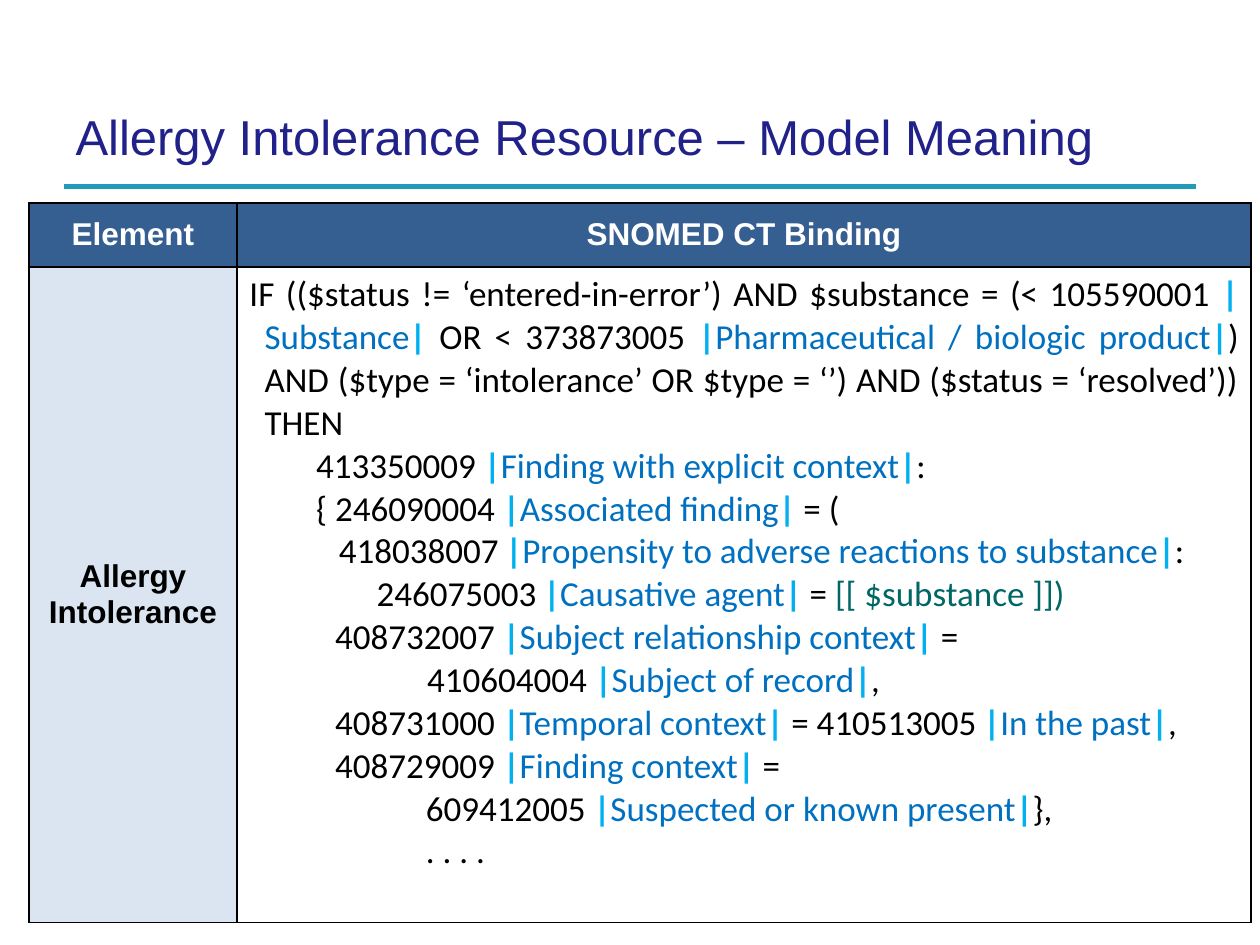
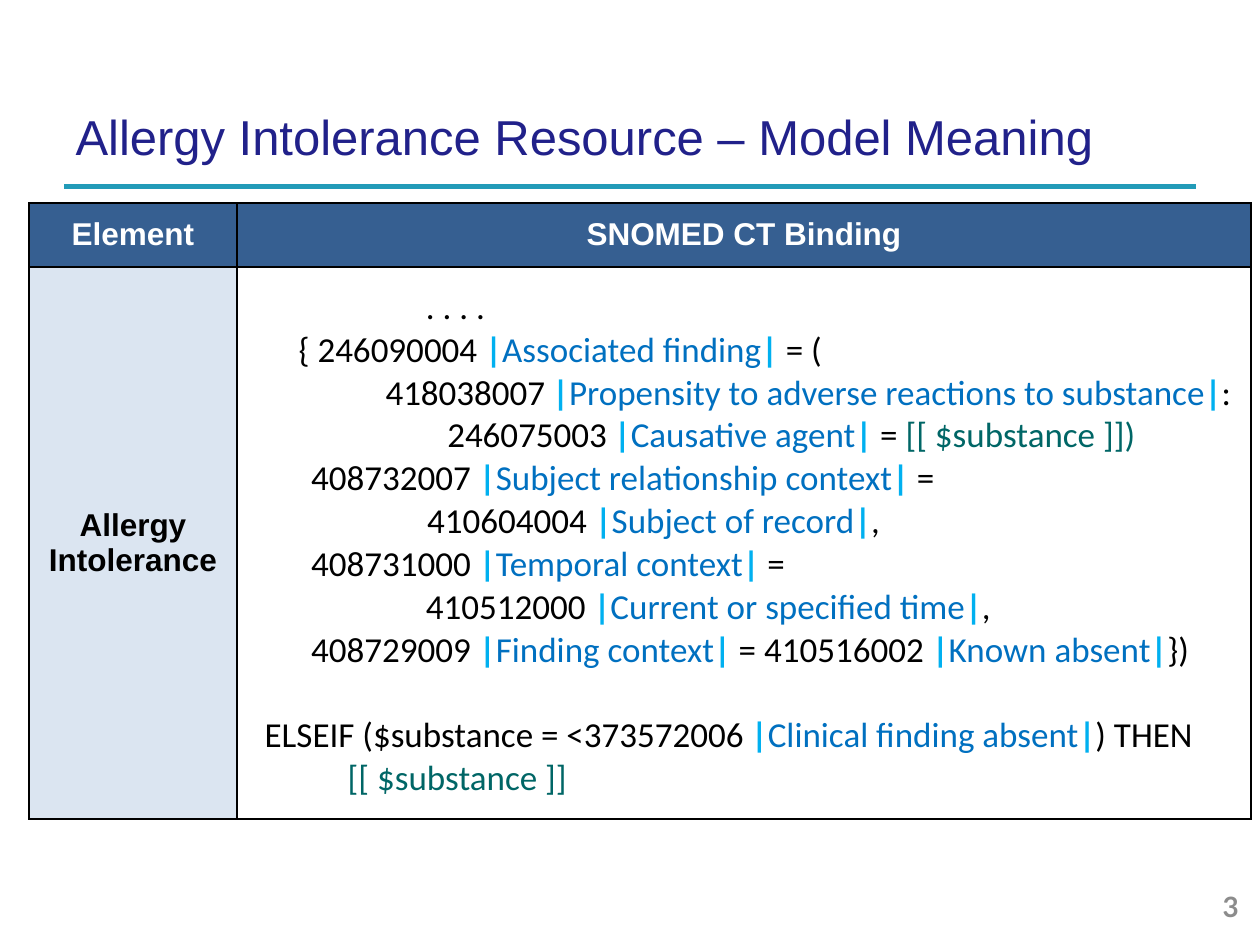
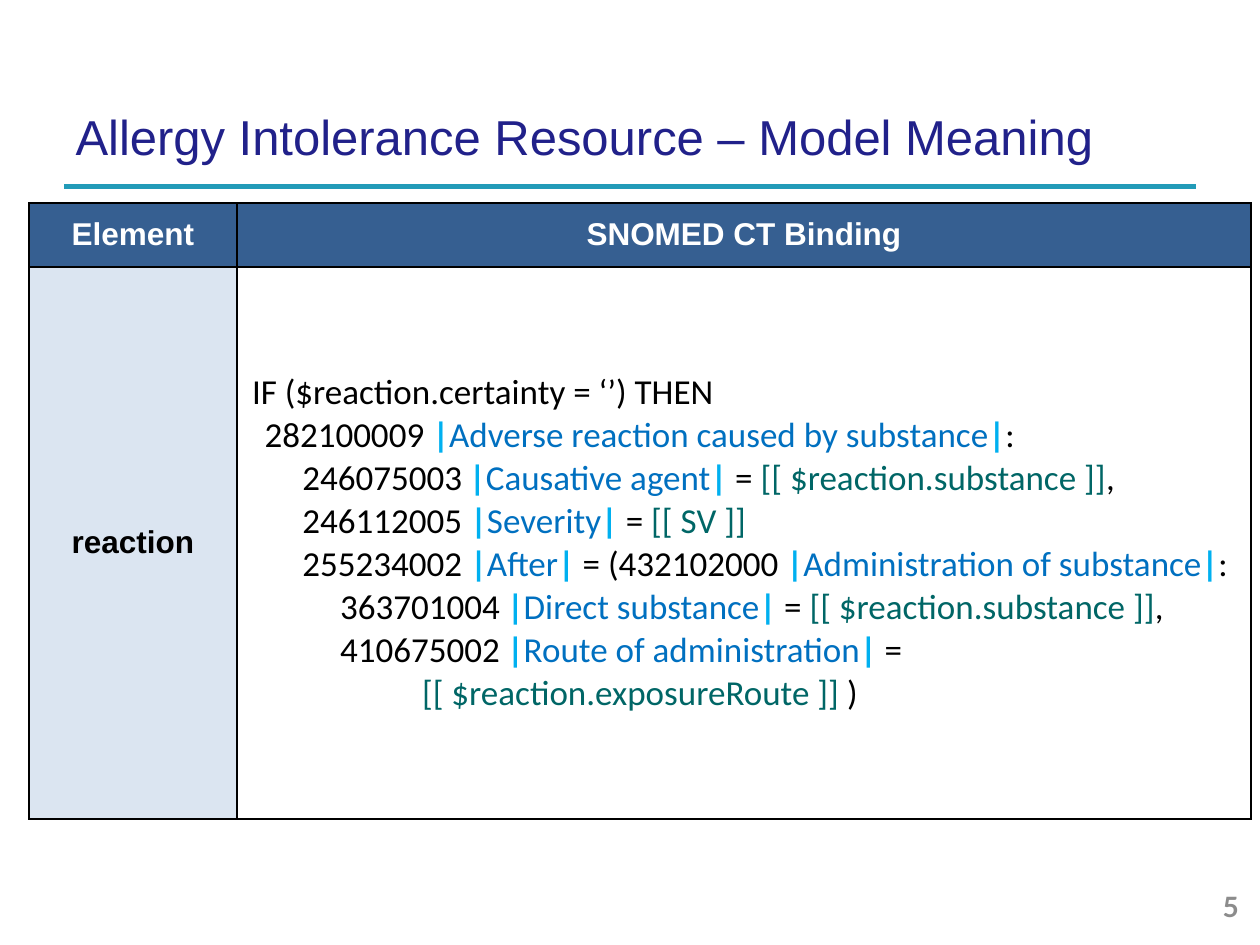
from lxml.etree import SubElement
from pptx import Presentation
from pptx.dml.color import RGBColor
from pptx.enum.shapes import MSO_CONNECTOR as Connector
from pptx.enum.text import MSO_ANCHOR as Anchor, MSO_AUTO_SIZE as AutoSize, PP_ALIGN as Align
from pptx.oxml.ns import qn
from pptx.util import Emu, Pt

SCALE = 9144  # EMU in one px, 100 px to the inch

COLORS = {
    "title": "21218A", "rule": "229BB8", "number": "8C8C8C",
    "header": "365F91", "element": "DBE5F1", "white": "FFFFFF", "black": "000000",
    "pipe": "00B0F0", "term": "0070C0", "slot": "006666", "gap": "333333",
}

# Font formats: color is a key of COLORS, the rest are font attributes
FORMATS = {
    "title": {"name": "Arial", "size": Pt(28), "bold": False, "color": "title"},
    "number": {"name": "Lato", "size": Pt(16), "bold": True, "color": "number"},
    "header": {"name": "Arial", "size": Pt(18), "bold": True, "color": "white"},
    "element": {"name": "Arial", "size": Pt(18), "bold": True, "color": "black"},
    "plain": {"name": "Calibri", "size": Pt(20), "bold": False, "color": "black"},
    "pipe": {"name": "Calibri", "size": Pt(20), "bold": True, "color": "pipe"},
    "term": {"name": "Calibri", "size": Pt(20), "bold": False, "color": "term"},
    "slot": {"name": "Calibri", "size": Pt(20), "bold": False, "color": "slot"},
    "gap": {"name": "Arial", "size": Pt(14), "bold": False, "color": "gap"},
}

TITLE = "Allergy Intolerance Resource – Model Meaning"
HEADINGS = ("Element", "SNOMED CT Binding")
COLUMNS = (165, 805)
HEADER_HEIGHT = 51

# Binding lines: left indent px, first-line indent px, text, optional space before in points.
# |term| is a concept name, [[ ]] a slot, and _ a narrow gap.
PAST_FINDING = [
    (12, -12, "IF (($status != ‘entered-in-error’) AND $substance = (< 105590001 |Substance| "
              "OR < 373873005 |Pharmaceutical / biologic product|) AND ($type = ‘intolerance’ "
              "OR $type = ‘’) AND ($status = ‘resolved’)) THEN"),
    (53, 0, "413350009 |Finding with explicit context|:"),
    (53, 0, "{ 246090004 |Associated finding| = ("),
    (71, 0, "418038007_|Propensity to adverse reactions to substance|:"),
    (101, 0, "246075003_|Causative agent| = [[ $substance ]])"),
    (68, 0, "408732007 |Subject relationship context| = "),
    (141, 0, "410604004 |Subject of record|,"),
    (68, 0, "408731000 |Temporal context| = 410513005_|In the past|,"),
    (68, 0, "408729009 |Finding context| = "),
    (140, 0, "609412005 |Suspected or known present|},"),
    (140, 0, ". . . ."),
]
ABSENT_FINDING = [
    (140, 0, ". . . ."),
    (39, 0, "{ 246090004 |Associated finding| = ("),
    (108, 0, "418038007_|Propensity to adverse reactions to substance|:"),
    (157, 0, "246075003_|Causative agent| = [[ $substance ]])"),
    (49, 0, "408732007 |Subject relationship context| = "),
    (141, 0, "410604004 |Subject of record|,"),
    (49, 0, "408731000 |Temporal context| = "),
    (140, 0, "410512000 |Current or specified time|,"),
    (49, 0, "408729009 |Finding context| = 410516002 |Known absent|})"),
    (22, -10, "ELSEIF ($substance = <373572006_|Clinical finding absent|) THEN", 24.4),
    (78, 0, "[[ $substance ]]"),
]
REACTION = [
    (22, -20, "IF ($reaction.certainty = ‘’) THEN"),
    (22, -10, "282100009 |Adverse reaction caused by substance|:"),
    (91, -49, "246075003_|Causative agent| = [[ $reaction.substance ]],"),
    (52, -10, "246112005 |Severity| = [[ SV ]]"),
    (52, -10, "255234002 |After| = (432102000 |Administration of substance|:"),
    (52, 20, "363701004_|Direct substance| = [[ $reaction.substance ]],"),
    (52, 20, "410675002_|Route of administration| = "),
    (137, 0, "[[ $reaction.exposureRoute ]] )"),
]

# Element, binding, body row height, anchor of the binding, page number
SLIDES = [
    ("Allergy Intolerance", PAST_FINDING, 520, Anchor.TOP, None),
    ("Allergy Intolerance", ABSENT_FINDING, 438, Anchor.MIDDLE, "3"),
    ("reaction", REACTION, 438, Anchor.MIDDLE, "5"),
]


def px(value):
    return Emu(value * SCALE)


def rgb(name):
    return RGBColor.from_string(COLORS[name])


def apply(target, values):
    for name, value in values.items():
        setattr(target, name, value)


def split_binding(text):
    """Yield (format name, text) for each run of a binding line."""
    for index, piece in enumerate(text.split("|")):
        if index % 2:
            yield from (("pipe", "|"), ("term", piece), ("pipe", "|"))
            continue
        before, opening, rest = piece.partition("[[")
        yield "plain", before.rstrip("_")
        if before.endswith("_"):
            yield "gap", " "
        if opening:
            inside, closing, after = rest.partition("]]")
            if after.startswith(")"):
                closing, after = closing + ")", after[1:]
            yield "slot", opening + inside + closing
            yield "plain", after


class Deck:
    def __init__(self):
        self.presentation = Presentation()
        apply(self.presentation, {"slide_width": px(1000), "slide_height": px(750)})
        self.slide = None

    def add_slide(self, title):
        self.slide = self.presentation.slides.add_slide(self.presentation.slide_layouts[5])
        shape = self.slide.shapes.title
        apply(shape, {"left": px(50), "top": px(81), "width": px(900), "height": px(60)})
        frame = shape.text_frame
        apply(frame, {"auto_size": AutoSize.NONE, "word_wrap": True,
                      "vertical_anchor": Anchor.BOTTOM})
        apply(frame, {f"margin_{side}": px(10) for side in ("left", "top", "right", "bottom")})
        self.add_runs(frame.paragraphs[0], [("title", title)], Align.LEFT)

    def add_runs(self, paragraph, runs, alignment):
        paragraph.alignment = alignment
        for format_name, text in runs:
            if not text:
                continue
            run = paragraph.add_run()
            run.text = text
            values = dict(FORMATS[format_name])
            run.font.color.rgb = rgb(values.pop("color"))
            apply(run.font, values)

    def add_rule(self):
        line = self.slide.shapes.add_connector(
            Connector.STRAIGHT, px(51), px(148), px(949), px(148))
        line.line.color.rgb = rgb("rule")
        line.line.width = Pt(3)
        SubElement(line._element.spPr, qn("a:effectLst"))

    def add_number(self, number):
        frame = self.slide.shapes.add_textbox(px(936), px(703), px(57), px(32)).text_frame
        apply(frame, {"word_wrap": True, "vertical_anchor": Anchor.MIDDLE})
        self.add_runs(frame.paragraphs[0], [("number", number)], Align.RIGHT)

    def style_cell(self, cell, fill, anchor=Anchor.MIDDLE):
        cell.vertical_anchor = anchor
        properties = cell._tc.get_or_add_tcPr()
        for side in ("lnL", "lnR", "lnT", "lnB"):
            border = SubElement(properties, qn(f"a:{side}"), w=str(Pt(1)))
            solid = SubElement(border, qn("a:solidFill"))
            SubElement(solid, qn("a:srgbClr"), val=COLORS["black"])
        cell.fill.solid()
        cell.fill.fore_color.rgb = rgb(fill)

    def add_label(self, cell, text, format_name):
        self.style_cell(cell, format_name)
        self.add_runs(cell.text_frame.paragraphs[0], [(format_name, text)], Align.CENTER)

    def add_binding(self, cell, lines, anchor):
        self.style_cell(cell, "white", anchor)
        frame = cell.text_frame
        for index, (left, first, text, *before) in enumerate(lines):
            paragraph = frame.add_paragraph() if index else frame.paragraphs[0]
            properties = paragraph._p.get_or_add_pPr()
            properties.set("marL", str(px(left)))
            properties.set("indent", str(px(first)))
            if before:
                paragraph.space_before = Pt(before[0])
            self.add_runs(paragraph, split_binding(text), Align.JUSTIFY)

    def add_table(self, element, lines, body_height, anchor):
        heights = (HEADER_HEIGHT, body_height)
        table = self.slide.shapes.add_table(
            2, 2, px(23), px(161), px(sum(COLUMNS)), px(sum(heights))).table
        apply(table, {"first_row": False, "horz_banding": False})
        for column, width in zip(table.columns, COLUMNS):
            column.width = px(width)
        for row, height in zip(table.rows, heights):
            row.height = px(height)
        for index, heading in enumerate(HEADINGS):
            self.add_label(table.cell(0, index), heading, "header")
        self.add_label(table.cell(1, 0), element, "element")
        self.add_binding(table.cell(1, 1), lines, anchor)


def main():
    deck = Deck()
    for element, lines, body_height, anchor, number in SLIDES:
        deck.add_slide(TITLE)
        deck.add_rule()
        if number:
            deck.add_number(number)
        deck.add_table(element, lines, body_height, anchor)
    deck.presentation.save("out.pptx")


if __name__ == "__main__":
    main()
